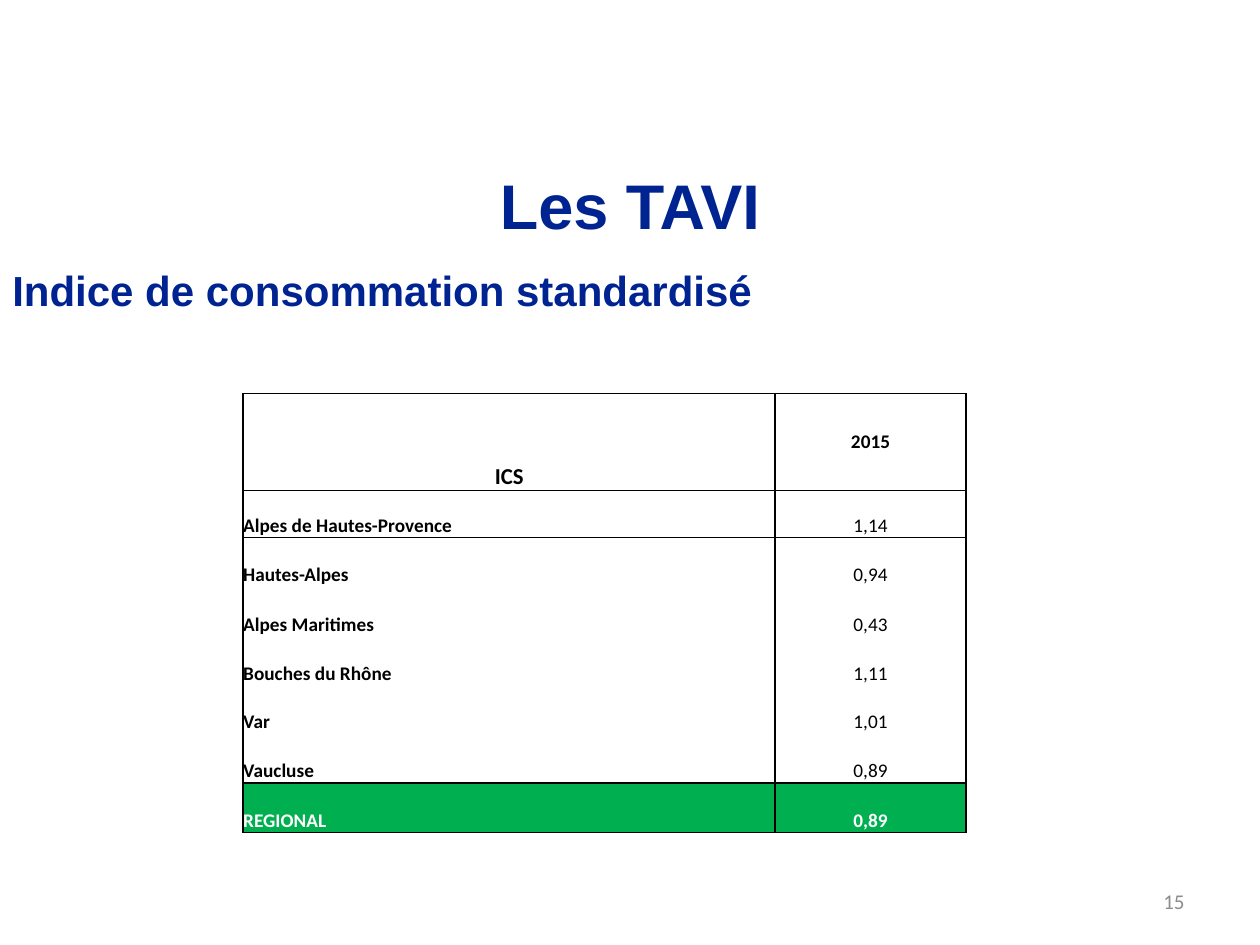
import pptx
import pptx.util
import pptx.dml.color
import pptx.enum.text
import pptx.oxml
import pptx.oxml.ns

Pt = pptx.util.Pt
ALIGN = pptx.enum.text.PP_ALIGN
ANCHOR = pptx.enum.text.MSO_ANCHOR

COLORS = {"navy": "002392", "black": "000000", "white": "FFFFFF",
          "green": "00B050", "gray": "8C8C8C"}
BOXES = [
    ("Les TAVI", (36, 77, 648, 79),
     dict(font="Arial", size=36, color="navy", bold=True, align=ALIGN.CENTER, anchor=ANCHOR.MIDDLE)),
    ("Indice de consommation standardisé", (0, 147.5, 684, 349),
     dict(font="Arial", size=24, color="navy", bold=True)),
    ("15", (516, 500.4, 168, 28.8),
     dict(size=12, color="gray", align=ALIGN.RIGHT, anchor=ANCHOR.MIDDLE)),
]
HEAD = ("ICS", "2015")
ROWS = [
    ("Alpes de Hautes-Provence", "1,14"),
    ("Hautes-Alpes", "0,94"),
    ("Alpes Maritimes", "0,43"),
    ("Bouches du Rhône", "1,11"),
    ("Var", "1,01"),
    ("Vaucluse", "0,89"),
]
TOTAL = ("REGIONAL", "0,89")
WIDTHS = (45.5, 304, 109, 108.5)
HEIGHTS = (28.3, 55.4, 27, 28.3, 28.3, 28.3, 27, 28.3, 28.3, 27)
PLAIN = "{2D5ABB26-0587-4C30-8999-92F81FD0307C}"


def rgb(name):
    return pptx.dml.color.RGBColor.from_string(COLORS[name])


def write(frame, text, font="Calibri", size=11, color="black", bold=False,
          align=ALIGN.LEFT, anchor=ANCHOR.TOP):
    frame.word_wrap = True
    frame.vertical_anchor = anchor
    par = frame.paragraphs[0]
    par.text = text
    par.alignment = align
    par.font.name = font
    par.font.size = Pt(size)
    par.font.bold = bold
    par.font.color.rgb = rgb(color)


def border(cell, sides):
    props = cell._tc.get_or_add_tcPr()
    space = pptx.oxml.ns.nsdecls("a")
    for spot, side in enumerate(s for s in "LRTB" if s in sides):
        line = pptx.oxml.parse_xml(
            f'<a:ln{side} {space} w="12700"><a:solidFill>'
            f'<a:srgbClr val="{COLORS["black"]}"/></a:solidFill></a:ln{side}>')
        props.insert(spot, line)


def add_grid(slide):
    shape = slide.shapes.add_table(
        len(HEIGHTS), len(WIDTHS), Pt(93.5), Pt(196.6), Pt(sum(WIDTHS)), Pt(sum(HEIGHTS)))
    grid = shape.table
    grid.first_row = grid.horz_banding = False
    grid._tbl.tblPr.find(pptx.oxml.ns.qn("a:tableStyleId")).text = PLAIN
    for col, width in zip(grid.columns, WIDTHS):
        col.width = Pt(width)
    for row, height in zip(grid.rows, HEIGHTS):
        row.height = Pt(height)

    blank = ("", "")
    lines = [blank, HEAD, *ROWS, TOTAL, blank]
    last = len(lines) - 2
    for r, line in enumerate(lines):
        for c, text in enumerate(("", *line, "")):
            cell = grid.cell(r, c)
            cell.margin_left = cell.margin_right = cell.margin_top = cell.margin_bottom = 0
            head, total = r == 1, r == last
            write(cell.text_frame, text,
                  size=13 if text == HEAD[0] else 11,
                  color="white" if total else "black",
                  bold=head or total or c == 1,
                  align=ALIGN.CENTER if head or c == 2 else ALIGN.LEFT)
            cell.vertical_anchor = ANCHOR.MIDDLE if head and c == 2 else ANCHOR.BOTTOM
            if total and text:
                cell.fill.solid()
                cell.fill.fore_color.rgb = rgb("green")
            else:
                cell.fill.background()
            if text:
                sides = "LR"
                if head or total or r == 2:
                    sides += "T"
                if head or r >= last - 1:
                    sides += "B"
                border(cell, sides)


def main():
    deck = pptx.Presentation()
    deck.slide_width, deck.slide_height = Pt(720), Pt(540)
    slide = deck.slides.add_slide(deck.slide_layouts[6])
    for text, place, style in BOXES:
        box = slide.shapes.add_textbox(*map(Pt, place))
        write(box.text_frame, text, **style)
    add_grid(slide)
    deck.save("out.pptx")


if __name__ == "__main__":
    main()
